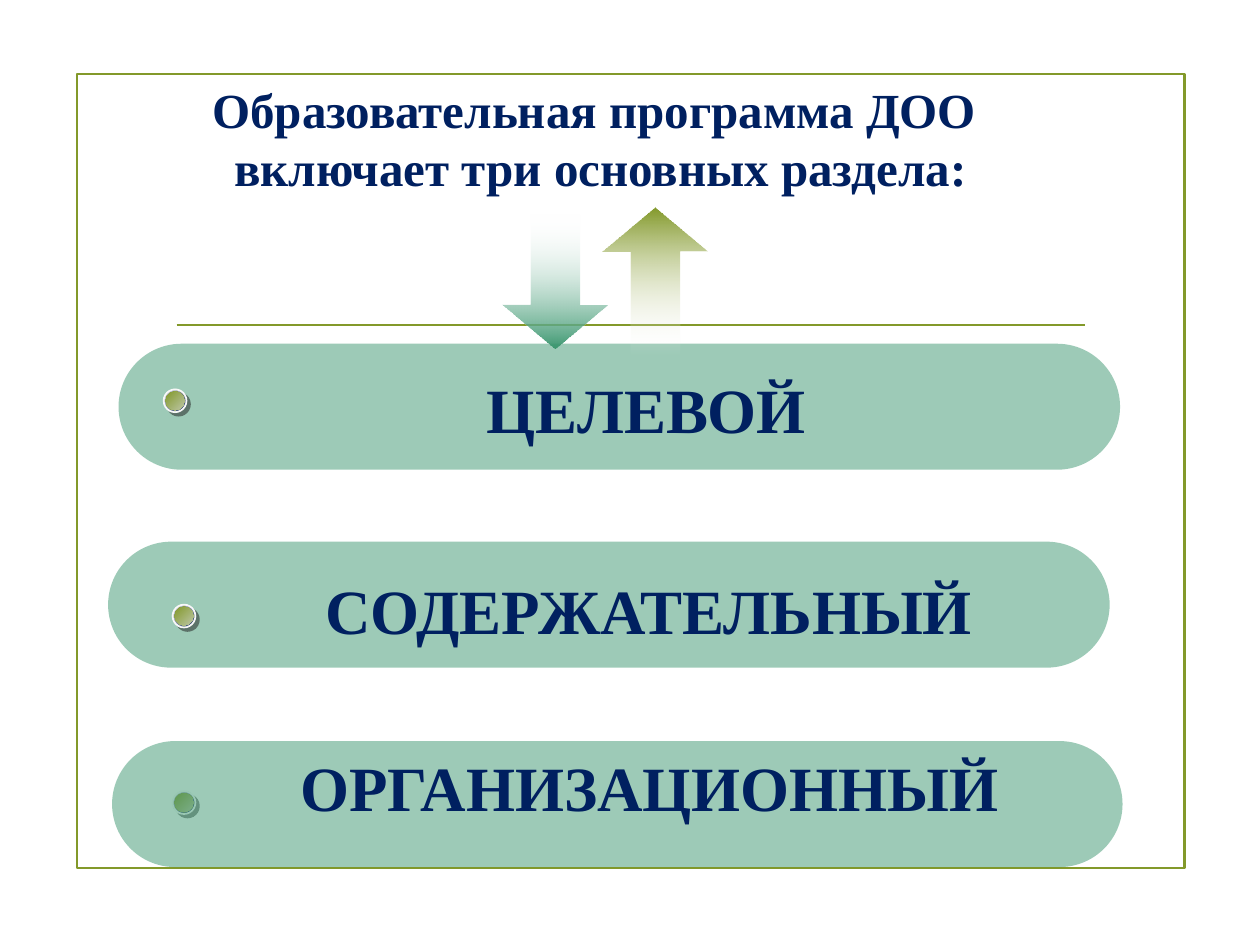
from lxml.etree import SubElement
from pptx import Presentation
from pptx.dml.color import RGBColor
from pptx.enum.shapes import MSO_CONNECTOR, MSO_SHAPE
from pptx.enum.text import MSO_ANCHOR, MSO_AUTO_SIZE, PP_ALIGN
from pptx.oxml.ns import qn
from pptx.util import Cm, Pt

NAVY = RGBColor(0x00, 0x20, 0x60)
GREEN = RGBColor(0x3C, 0x97, 0x70)
OLIVE = RGBColor(0x83, 0x99, 0x2A)
SAGE = RGBColor(0xBD, 0xC6, 0xA6)
MIST = RGBColor(0xDD, 0xDD, 0xE1)
STEEL = RGBColor(0x22, 0x38, 0x64)
PALE = RGBColor(0xF8, 0xF8, 0xF8)
WHITE = RGBColor(0xFF, 0xFF, 0xFF)
FONT = {"name": "Times New Roman", "bold": True}
DOT = 0.46


def fade(shape, part):
    """Set the opacity of the first fill colour, in percent."""
    color = shape.element.spPr.find(".//" + qn("a:srgbClr"))
    SubElement(color, qn("a:alpha"), val=str(part * 1000))


def blend(shape, colors, angle):
    """Fill a shape with a linear gradient of two colours."""
    shape.fill.gradient()
    shape.fill.gradient_angle = angle
    for stop, color, place in zip(shape.fill.gradient_stops, colors, (0, 1)):
        stop.color.rgb = color
        stop.position = place


def draw(shapes, kind, box):
    """Add a plain shape with no line and no shadow."""
    shape = shapes.add_shape(kind, *map(Cm, box))
    shape.shadow.inherit = False
    shape.line.fill.background()
    return shape


def write(frame, text, size):
    """Put centred bold navy text into a text frame."""
    frame.text = text
    frame.word_wrap = True
    para = frame.paragraphs[0]
    para.alignment = PP_ALIGN.CENTER
    for run in para.runs:
        for key, value in {**FONT, "size": Pt(size)}.items():
            setattr(run.font, key, value)
        run.font.color.rgb = NAVY
    return para


def border(slide, box):
    """Draw the page frame and the rule inside it."""
    left, top, width, _ = box
    frame = draw(slide.shapes, MSO_SHAPE.RECTANGLE, box)
    frame.fill.background()
    y = Cm(top + 5.05)
    rule = slide.shapes.add_connector(
        MSO_CONNECTOR.STRAIGHT, Cm(left + 2.01), y, Cm(left + width - 2.01), y)
    for shape in (frame, rule):
        shape.line.color.rgb = OLIVE
        shape.line.width = Pt(1.25)
    SubElement(rule.element.spPr, qn("a:effectLst"))


def heading(slide, box, text):
    """Fill and place the title."""
    title = slide.shapes.title
    for key, value in zip(("left", "top", "width", "height"), box):
        setattr(title, key, Cm(value))
    write(title.text_frame, text, 28)
    title.text_frame.vertical_anchor = MSO_ANCHOR.MIDDLE
    title.text_frame.auto_size = MSO_AUTO_SIZE.NONE


def arrow(slide, box, turn, color):
    """Draw a turned arrow that fades out at its tail."""
    shape = draw(slide.shapes, MSO_SHAPE.RIGHT_ARROW, box)
    shape.rotation = turn
    shape.adjustments[0] = 0.465
    shape.adjustments[1] = 0.421
    blend(shape, (WHITE, color), 0)
    fade(shape, 0)


def bullet(slide, left, top):
    """Draw a round button with a rim and a shadow."""
    shapes = slide.shapes.add_group_shape().shapes
    rim = draw(shapes, MSO_SHAPE.OVAL, (left, top, DOT, DOT))
    blend(rim, (MIST, STEEL), 315)
    rim.line.color.rgb = PALE
    rim.line.width = Pt(1)
    cast = SubElement(rim.element.spPr.find(qn("a:effectLst")),
                      qn("a:outerShdw"), dist=str(Pt(2.8)), dir="2700000")
    tint = SubElement(cast, qn("a:srgbClr"), val="1C1C1C")
    SubElement(tint, qn("a:alpha"), val="50000")
    core = draw(shapes, MSO_SHAPE.OVAL,
                (left + 0.04, top + 0.04, DOT - 0.08, DOT - 0.08))
    blend(core, (OLIVE, SAGE), 315)


def section(slide, box, text, label, dot, under=False):
    """Draw a pill with its label and button, placed from its corner."""
    left, top, _, _ = box
    spot = left + dot[0], top + dot[1]
    if under:
        bullet(slide, *spot)
    pill = draw(slide.shapes, MSO_SHAPE.ROUNDED_RECTANGLE, box)
    pill.adjustments[0] = 0.5
    pill.fill.solid()
    pill.fill.fore_color.rgb = GREEN
    fade(pill, 50)
    dx, dy, width = label
    area = slide.shapes.add_textbox(
        Cm(left + dx), Cm(top + dy), Cm(width), Cm(1.65))
    write(area.text_frame, text, 36).line_spacing = 0.9
    area.text_frame.auto_size = MSO_AUTO_SIZE.SHAPE_TO_FIT_TEXT
    if not under:
        bullet(slide, *spot)


def main():
    """Build and save the slide."""
    deck = Presentation()
    deck.slide_width, deck.slide_height = Cm(25.4), Cm(19.05)
    slide = deck.slides.add_slide(deck.slide_layouts[5])
    border(slide, (1.55, 1.5, 22.33, 16))
    heading(slide, (2.18, 1.19, 19.84, 3.18),
            "Образовательная программа ДОО \vвключает три основных раздела:")
    arrow(slide, (9.83, 4.62, 2.72, 2.11), 90, GREEN)
    section(slide, (2.39, 6.93, 20.19, 2.54), "ЦЕЛЕВОЙ",
            (1.78, 0.59, 17.73), (0.91, 0.92))
    arrow(slide, (11.71, 4.62, 3, 2.11), 270, OLIVE)
    section(slide, (2.18, 10.92, 20.19, 2.54), "СОДЕРЖАТЕЛЬНЫЙ",
            (2.19, 0.64, 17.42), (1.3, 1.27))
    section(slide, (2.26, 14.94, 20.37, 2.54), "ОРГАНИЗАЦИОННЫЙ",
            (2.34, 0.2, 16.99), (1.22, 1.01), under=True)
    deck.save("out.pptx")


if __name__ == "__main__":
    main()
